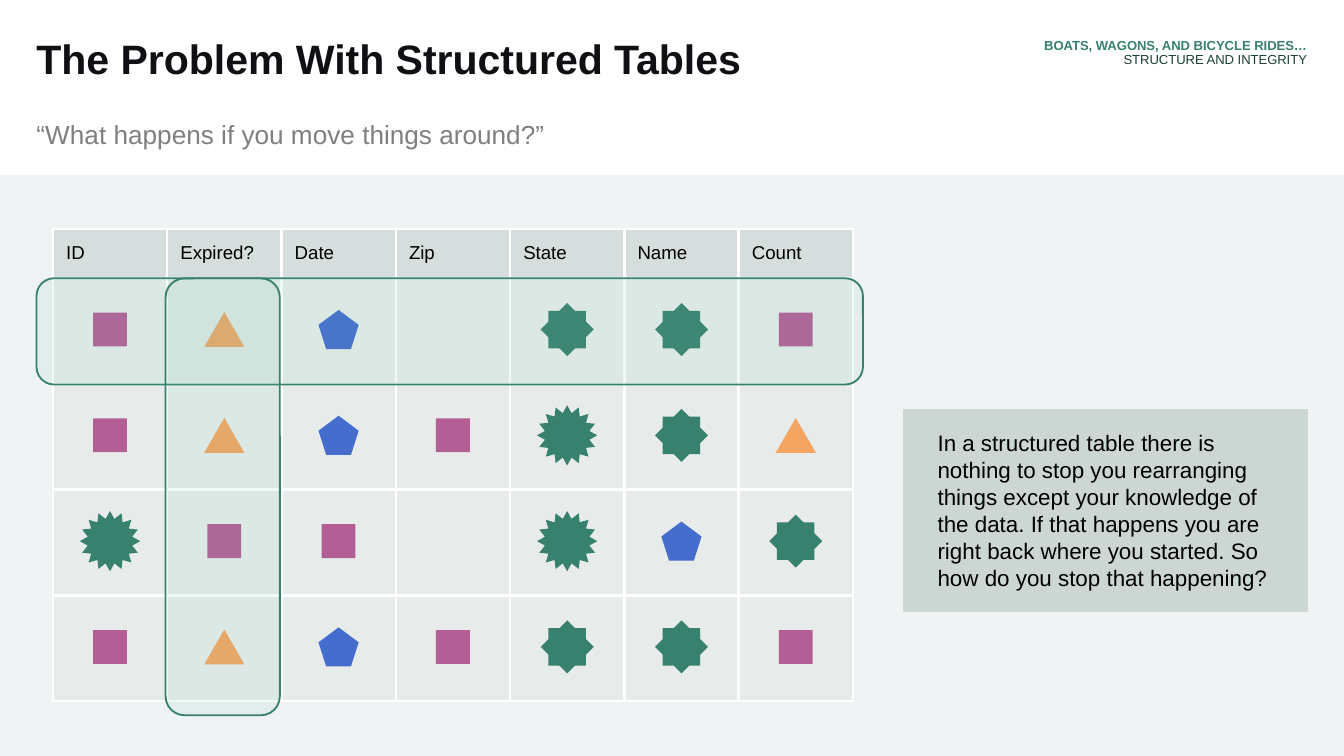
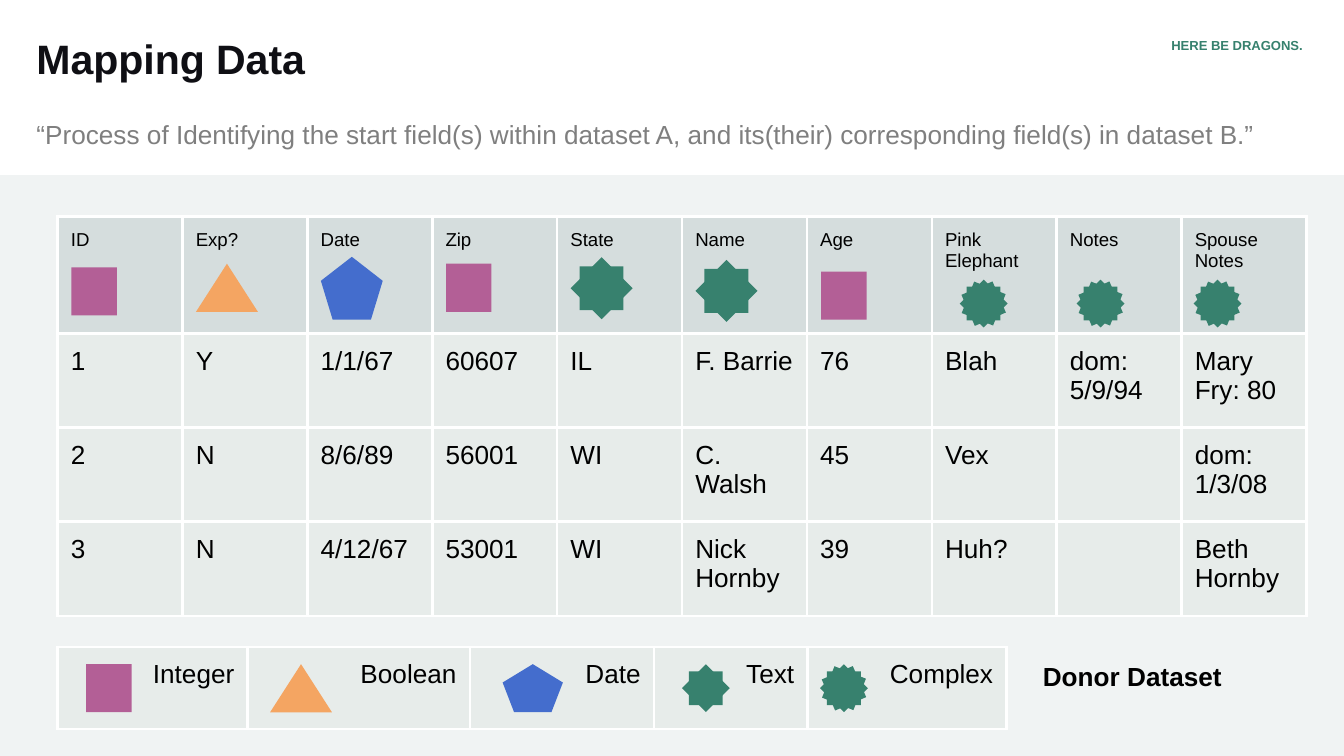
from lxml import etree
from pptx import Presentation
from pptx.dml.color import RGBColor
from pptx.enum.shapes import MSO_SHAPE as Shape
from pptx.enum.text import MSO_ANCHOR as Anchor, PP_ALIGN as Align
from pptx.oxml.ns import qn
from pptx.util import Cm, Pt

FONT = "Arial"
WHITE = RGBColor(0xFF, 0xFF, 0xFF)
BLACK = RGBColor(0, 0, 0)
INK = RGBColor(0x0F, 0x0F, 0x14)
GRAY = RGBColor(0x7F, 0x7F, 0x7F)
PALE = RGBColor(0xF0, 0xF3, 0xF3)
HEAD = RGBColor(0xD5, 0xDD, 0xDD)
BODY = RGBColor(0xE7, 0xEC, 0xEA)
NOTE = RGBColor(0xCC, 0xD7, 0xD4)
MINT = RGBColor(0x73, 0xC5, 0xAF)
GREEN = RGBColor(0x37, 0x81, 0x6E)
DARK = RGBColor(0x1B, 0x40, 0x36)
PINK = RGBColor(0xB3, 0x5F, 0x96)
AMBER = RGBColor(0xF4, 0xA5, 0x62)
BLUE = RGBColor(0x44, 0x6D, 0xCD)

ICONS = {
    "int": (Shape.RECTANGLE, PINK, [0]),
    "bool": (Shape.ISOSCELES_TRIANGLE, AMBER, [0]),
    "date": (Shape.REGULAR_PENTAGON, BLUE, [0]),
    "text": (Shape.RECTANGLE, GREEN, [0, 45]),
    "mix": (Shape.RECTANGLE, GREEN, [0, 45, 21.7, 66.7]),
    "star": (Shape.STAR_16_POINT, GREEN, [0]),
}

FIELDS = ["ID", "Expired?", "Date", "Zip", "State", "Name", "Count"]
SIZES = {"int": (0.64, 0.64), "bool": (0.76, 0.66), "date": (0.76, 0.74),
         "text": (0.71, 0.71), "star": (1.14, 1.14)}
GRID = [
    ["int", "bool", "date", None, "text", "text", "int"],
    ["int", "bool", "date", "int", "star", "text", "bool"],
    ["star", "int", "int", None, "star", "date", "text"],
    ["int", "bool", "date", "int", "text", "text", "int"],
]
BANDS = [(0.69, 5.26, 15.62, 2.01, 0), (0.08, 8.31, 8.26, 2.16, 270)]
ADVICE = ("In a structured table there is nothing to stop you rearranging things "
          "except your knowledge of the data. If that happens you are right back "
          "where you started. So how do you stop that happening?")

DONOR = [
    ["ID", "Exp?", "Date", "Zip", "State", "Name", "Age", "Pink Elephant",
     "Notes", "Spouse Notes"],
    ["1", "Y", "1/1/67", "60607", "IL", "F. Barrie", "76", "Blah",
     "dom:\n5/9/94", "Mary Fry: 80"],
    ["2", "N", "8/6/89", "56001", "WI", "C. Walsh", "45", "Vex", "", "dom: 1/3/08"],
    ["3", "N", "4/12/67", "53001", "WI", "Nick Hornby", "39", "Huh?", "",
     "Beth Hornby"],
]
BIG = {"int": (0.86, 0.91), "bool": (1.17, 0.91), "date": (1.17, 1.19),
       "text": (0.83, 0.83), "mix": (0.64, 0.64)}
KEY = BIG | {"date": (1.14, 0.91), "text": (0.64, 0.64)}
TYPES = [("int", 1.78, 5.51), ("bool", 4.29, 5.44), ("date", 6.65, 5.45),
         ("int", 8.86, 5.44), ("text", 11.37, 5.45), ("text", 13.73, 5.5),
         ("int", 15.95, 5.59), ("mix", 18.59, 5.74), ("mix", 20.8, 5.74),
         ("mix", 23.01, 5.74)]
LEGEND = [("Integer", 3.59, "int", 2.06), ("Boolean", 4.2, "bool", 5.69),
          ("Date", 3.48, "date", 10.07), ("Text", 2.9, "text", 13.34),
          ("Complex", 3.76, "mix", 15.95)]


def style(font, size, color, bold=False):
    font.name, font.size, font.bold = FONT, Pt(size), bold
    font.color.rgb = color


def pad(frame, left, top, right, low):
    frame.margin_left, frame.margin_top = Cm(left), Cm(top)
    frame.margin_right, frame.margin_bottom = Cm(right), Cm(low)


def add_box(shapes, kind, x, y, w, h, fill, line=None, width=1):
    box = shapes.add_shape(kind, Cm(x), Cm(y), Cm(w), Cm(h))
    box.shadow.inherit = False
    box.fill.solid()
    box.fill.fore_color.rgb = fill
    if line is None:
        box.line.fill.background()
    else:
        box.line.color.rgb = line
        box.line.width = Pt(width)
    return box


def add_text(slide, x, y, w, h, text, size, color, bold=False, gap=1,
             pads=(0, 0, 0.25, 0.25)):
    frame = slide.shapes.add_textbox(Cm(x), Cm(y), Cm(w), Cm(h)).text_frame
    frame.word_wrap = True
    pad(frame, *pads)
    para = frame.paragraphs[0]
    para.text = text
    para.line_spacing = gap
    style(para.font, size, color, bold)


def add_icon(slide, kind, x, y, sizes):
    shape, color, turns = ICONS[kind]
    w, h = sizes[kind]
    shapes = slide.shapes
    if len(turns) > 1:
        shapes = shapes.add_group_shape().shapes
    for turn in turns:
        add_box(shapes, shape, x - w / 2, y - h / 2, w, h, color).rotation = turn


def edge(cell):
    props = cell._tc.get_or_add_tcPr()
    for spot, side in enumerate(("lnL", "lnR", "lnT", "lnB")):
        line = etree.Element(qn("a:" + side), w=str(Pt(1.5)))
        fill = etree.SubElement(line, qn("a:solidFill"))
        etree.SubElement(fill, qn("a:srgbClr"), val=str(WHITE))
        props.insert(spot, line)


def add_grid(slide, x, y, cols, rows, texts, sizes, fills, align=Align.LEFT):
    table = slide.shapes.add_table(len(rows), len(cols), Cm(x), Cm(y),
                                   Cm(sum(cols)), Cm(sum(rows))).table
    table.first_row = table.horz_banding = False
    for col, wide in zip(table.columns, cols):
        col.width = Cm(wide)
    for row, high, line, size, fill in zip(table.rows, rows, texts, sizes, fills):
        row.height = Cm(high)
        for cell, text in zip(row.cells, line):
            pad(cell, 0.25, 0.25, 0.25, 0.25)
            cell.fill.solid()
            cell.fill.fore_color.rgb = fill
            edge(cell)
            cell.text = text
            for para in cell.text_frame.paragraphs:
                para.alignment = align
                style(para.font, size, BLACK)


def add_page(deck, title, quote, wide, tag, place):
    slide = deck.slides.add_slide(deck.slide_layouts[6])
    panel = add_box(slide.shapes, Shape.ROUNDED_RECTANGLE, 0, 3.31, 25.4, 10.98, PALE)
    panel.adjustments[0] = 0
    add_text(slide, 0.69, 0.74, 20.3, 1.5, title, 22, INK, True, 0.9)
    add_text(slide, 0.69, 2.23, wide, 1.19, quote, 14, GRAY)
    frame = slide.shapes.add_textbox(*map(Cm, place)).text_frame
    frame.word_wrap = True
    pad(frame, 0, 0, 0, 0.25)
    para = frame.paragraphs[0]
    para.alignment, para.line_spacing = Align.RIGHT, 0.9
    for spot, (text, color, bold) in enumerate(tag):
        if spot:
            para.add_line_break()
        run = para.add_run()
        run.text = text
        style(run.font, 7, color, bold)
    return slide


def add_problem(deck):
    slide = add_page(deck, "The Problem With Structured Tables",
                     "“What happens if you move things around?”", 18,
                     [("BOATS, WAGONS, AND BICYCLE RIDES…", GREEN, True),
                      ("STRUCTURE AND INTEGRITY", DARK, False)],
                     (16.9, 0.74, 7.8, 0.91))
    left, top, wide, head, high = 1, 4.33, 2.16, 0.9, 2
    count = len(GRID)
    add_grid(slide, left, top, [wide] * len(FIELDS), [head] + [high] * count,
             [FIELDS] + [[""] * len(FIELDS)] * count, [10] * (count + 1),
             [HEAD] + [BODY] * count)
    for r, row in enumerate(GRID):
        for c, kind in enumerate(row):
            if kind:
                add_icon(slide, kind, left + wide * (c + 0.5),
                         top + head + high * (r + 0.5), SIZES)
    for x, y, w, h, turn in BANDS:
        band = add_box(slide.shapes, Shape.ROUNDED_RECTANGLE, x, y, w, h, MINT, GREEN)
        band.rotation = turn
        color = band._element.spPr.find(qn("a:solidFill"))[0]
        etree.SubElement(color, qn("a:alpha"), val="10000")
    note = add_box(slide.shapes, Shape.RECTANGLE, 17.08, 7.74, 7.63, 3.81,
                   NOTE, NOTE, 0.75)
    frame = note.text_frame
    frame.word_wrap = True
    frame.vertical_anchor = Anchor.MIDDLE
    pad(frame, 0.64, 0.51, 0.64, 0.51)
    para = frame.paragraphs[0]
    para.text = ADVICE
    para.alignment = Align.LEFT
    style(para.font, 12, BLACK)


def add_mapping(deck):
    slide = add_page(deck, "Mapping Data",
                     "“Process of Identifying the start field(s) within dataset A, "
                     "and its(their) corresponding field(s) in dataset B.”", 24,
                     [("HERE BE DRAGONS.", GREEN, True)], (19.22, 0.74, 5.4, 0.41))
    left = 1.09
    add_grid(slide, left, 4.09, [2.36] * len(DONOR[0]), [2.21] + [1.78] * 3,
             DONOR, [10] + [14] * 3, [HEAD] + [BODY] * 3)
    for kind, x, y in TYPES:
        add_icon(slide, kind, x, y, BIG)
    names, cols, kinds, spots = zip(*LEGEND)
    add_grid(slide, left, 12.23, cols, [1.55], [names], [14], [BODY], Align.RIGHT)
    for kind, x in zip(kinds, spots):
        add_icon(slide, kind, x, 13.01, KEY)
    add_text(slide, 19.46, 12.23, 4.11, 1.12, "Donor Dataset", 14, BLACK, True,
             pads=(0.25,) * 4)


def main():
    deck = Presentation()
    deck.slide_width, deck.slide_height = Cm(25.4), Cm(14.29)
    add_problem(deck)
    add_mapping(deck)
    deck.save("out.pptx")


if __name__ == "__main__":
    main()
